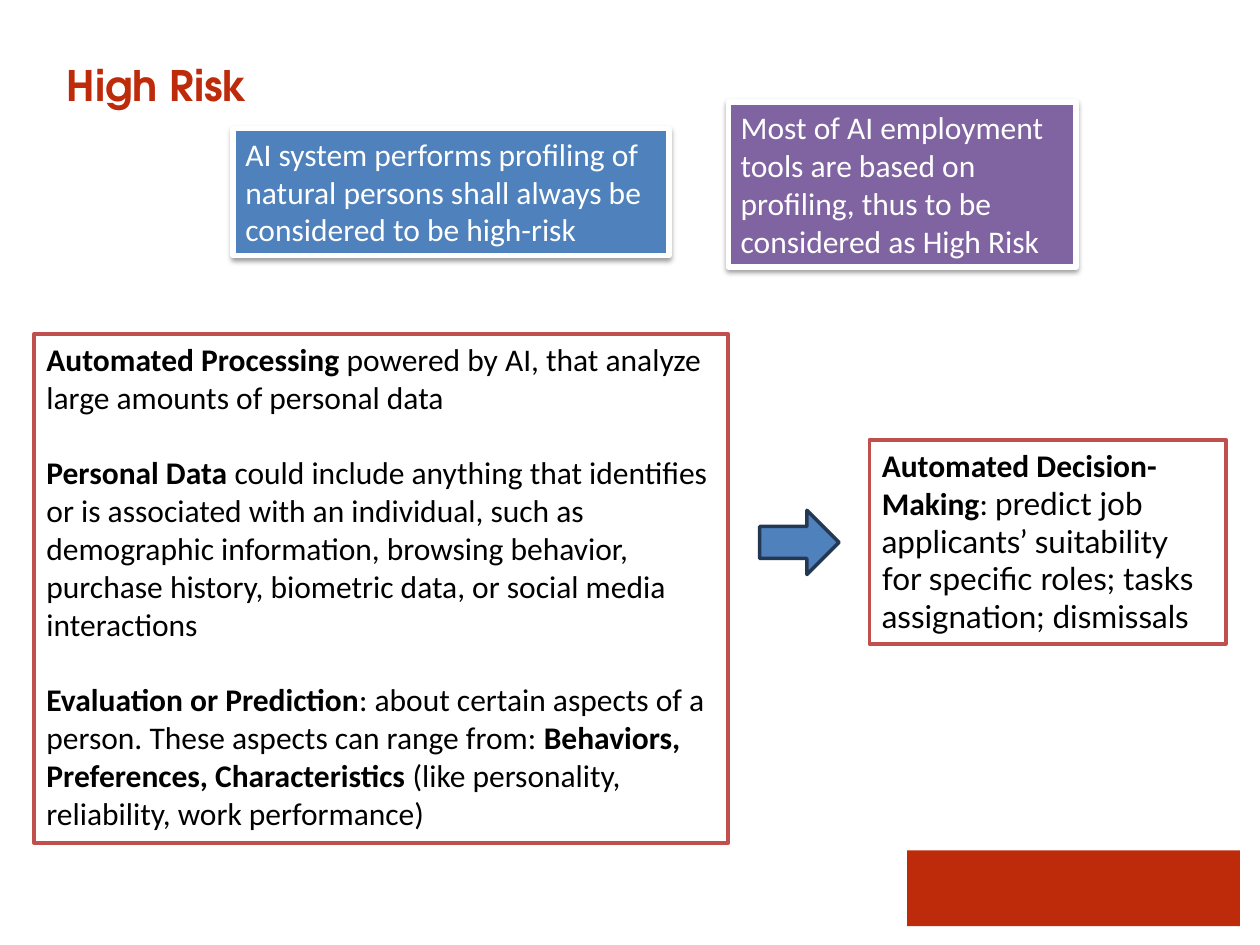
"""Build the "High Risk" slide on automated profiling in employment."""
import pptx
import pptx.dml.color
import pptx.enum.shapes
import pptx.enum.text
import pptx.oxml
import pptx.oxml.ns
import pptx.util

Inches, Pt = pptx.util.Inches, pptx.util.Pt
SHAPES = pptx.enum.shapes.MSO_SHAPE

COLORS = {
    "brand": "BD2B0B", "blue": "4F81BD", "navy": "233953", "purple": "8064A2",
    "red": "C0504D", "white": "FFFFFF", "black": "000000",
}
TITLE = "High Risk"
PROCESSING = [
    [("Automated Processing", True),
     (" powered by AI, that analyze large amounts of personal data", False)],
    [("Personal Data", True),
     (" could include anything that identifies or is associated with an individual, "
      "such as demographic information, browsing behavior, purchase history, "
      "biometric data, or social media interactions", False)],
    [("Evaluation or Prediction", True),
     (": about certain aspects of a person. These aspects can range from: ", False),
     ("Behaviors, Preferences, Characteristics ", True),
     ("(like personality, reliability, work performance)", False)],
]
DECISION = [
    [("Automated Decision-Making", True), (": ", False),
     ("predict job applicants’ suitability for specific roles; tasks assignation; "
      "dismissals", False, "Lato")],
]
TOOLS = [[("Most of AI employment tools are based on profiling, thus to be considered "
           "as High Risk", False)]]
PROFILING = [[("AI system performs profiling of natural persons shall always be "
               "considered to be high-risk", False)]]

OUTLINED = {"fill": "white", "line": "red", "width": 2, "text": "black", "shadow": False}
CALLOUT = {"line": "white", "width": 3, "text": "white", "shadow": True}
BOXES = [
    ((0.27, 2.65, 5.51, 4.04), PROCESSING, OUTLINED),
    ((6.9, 3.49, 2.83, 1.62), DECISION, OUTLINED),
    ((5.78, 0.81, 2.76, 1.31), TOOLS, {**CALLOUT, "fill": "purple"}),
    ((1.85, 1.02, 3.46, 1.01), PROFILING, {**CALLOUT, "fill": "blue"}),
]


def color(name):
    return pptx.dml.color.RGBColor.from_string(COLORS[name])


def add_shape(slide, kind, place, fill, line=None, width=0):
    shape = slide.shapes.add_shape(kind, *map(Inches, place))
    shape.shadow.inherit = False
    shape.fill.solid()
    shape.fill.fore_color.rgb = color(fill)
    if line:
        shape.line.color.rgb = color(line)
        shape.line.width = Pt(width)
    else:
        shape.line.fill.background()
    return shape


def add_shadow(shape):
    effects = shape._element.spPr.find(pptx.oxml.ns.qn("a:effectLst"))
    effects.append(pptx.oxml.parse_xml(
        f'<a:outerShdw {pptx.oxml.ns.nsdecls("a")} blurRad="{Pt(3.1)}" dist="{Pt(1.6)}" '
        f'dir="5400000" rotWithShape="0"><a:srgbClr val="{COLORS["black"]}">'
        '<a:alpha val="38000"/></a:srgbClr></a:outerShdw>'))


def add_box(slide, place, paragraphs, style):
    shape = add_shape(slide, SHAPES.RECTANGLE, place,
                      style["fill"], style["line"], style["width"])
    if style["shadow"]:
        add_shadow(shape)
    frame = shape.text_frame
    frame.word_wrap = True
    frame.auto_size = pptx.enum.text.MSO_AUTO_SIZE.SHAPE_TO_FIT_TEXT
    frame.vertical_anchor = pptx.enum.text.MSO_ANCHOR.TOP
    for index, runs in enumerate(paragraphs):
        paragraph = frame.add_paragraph() if index else frame.paragraphs[0]
        paragraph.alignment = pptx.enum.text.PP_ALIGN.LEFT
        if index:
            paragraph.space_before = Pt(21.6)
        paragraph.font.size = Pt(18)
        paragraph.font.name = "Calibri"
        paragraph.font.color.rgb = color(style["text"])
        for text, bold, *font_name in runs:
            run = paragraph.add_run()
            run.text = text
            run.font.bold = bold
            if font_name:
                run.font.name = font_name[0]


def add_title(slide):
    frame = slide.shapes.add_textbox(*map(Inches, (0.43, 0.52, 9.21, 0.71))).text_frame
    frame.word_wrap = True
    paragraph = frame.paragraphs[0]
    paragraph.text = TITLE
    paragraph.line_spacing = Pt(22)
    paragraph.font.size = Pt(24)
    paragraph.font.bold = True
    paragraph.font.name = "TeX Gyre Adventor"
    paragraph.font.color.rgb = color("brand")


def main():
    presentation = pptx.Presentation()
    presentation.slide_width, presentation.slide_height = Inches(10), Inches(7.5)
    slide = presentation.slides.add_slide(presentation.slide_layouts[6])
    add_shape(slide, SHAPES.RECTANGLE, (7.2, 6.75, 2.64, 0.6), "brand")
    add_title(slide)
    for place, paragraphs, style in BOXES:
        add_box(slide, place, paragraphs, style)
    add_shape(slide, SHAPES.RIGHT_ARROW, (6.03, 4.05, 0.63, 0.51), "blue", "navy", 2)
    presentation.save("out.pptx")


if __name__ == "__main__":
    main()
